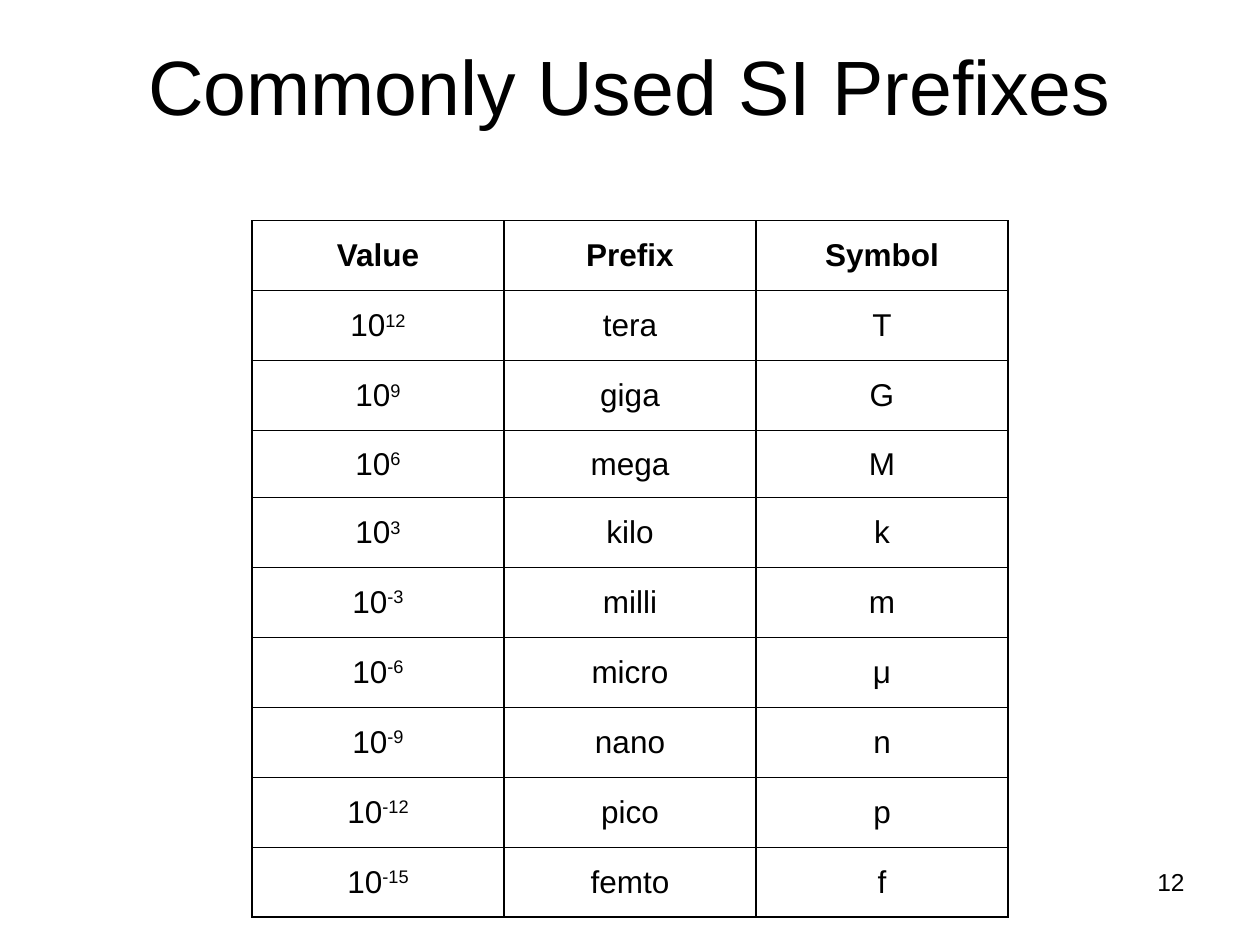
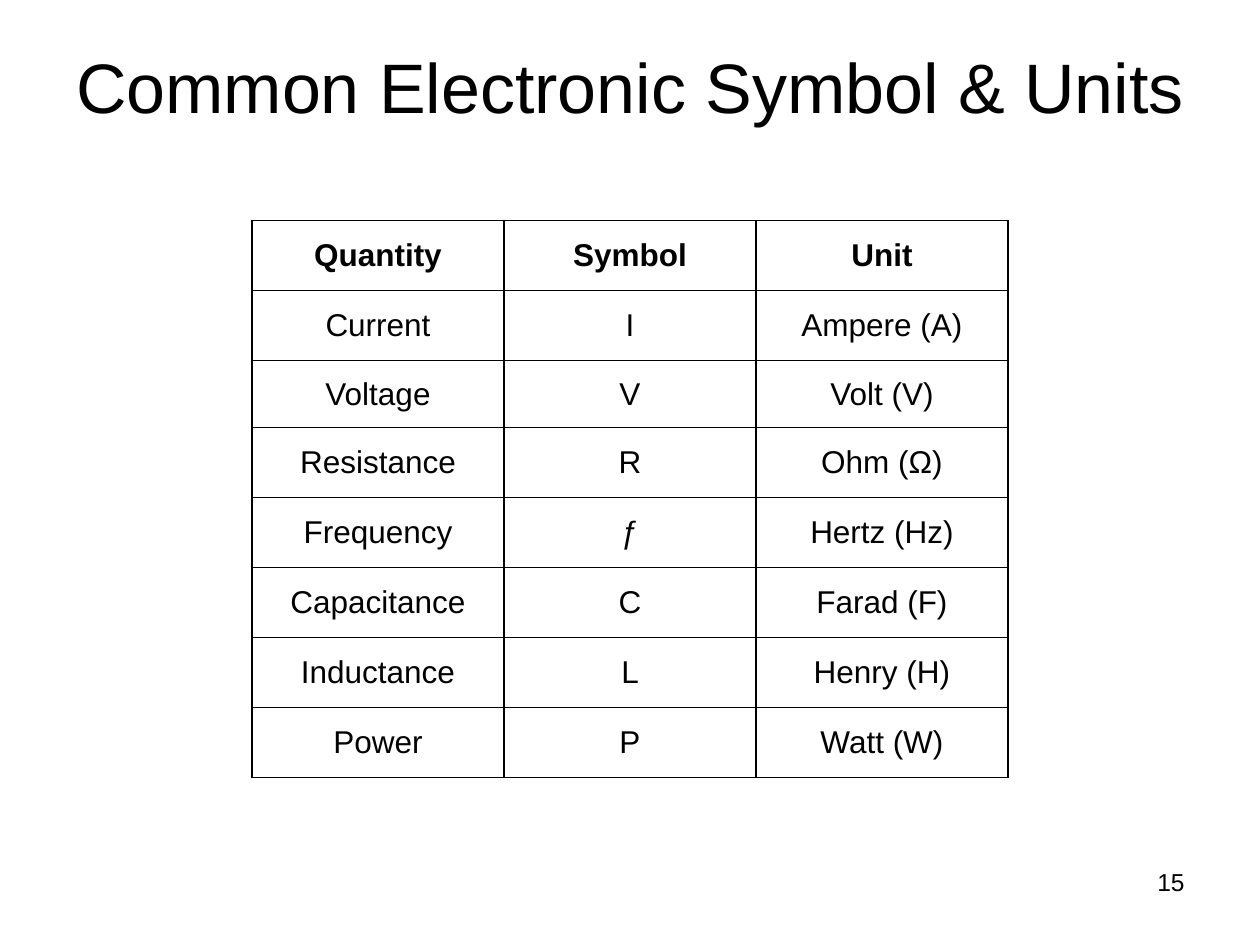
"""Build two reference slides: SI prefixes, and electronic symbols with their units."""
from lxml.etree import SubElement
from pptx import Presentation
from pptx.dml.color import RGBColor
from pptx.enum.text import MSO_ANCHOR, MSO_AUTO_SIZE, PP_ALIGN
from pptx.oxml.ns import qn
from pptx.util import Cm, Pt

BLACK = RGBColor(0x00, 0x00, 0x00)
FONT = "Arial"
COLUMN_WIDTH, ROW_HEIGHT, SHORT_ROW_HEIGHT = Cm(5.08), Cm(1.41), Cm(1.35)
BORDER = Pt(1)

SLIDES = [
    {
        "title": "Commonly Used SI Prefixes",
        "title_size": 44, "title_top": 0, "title_height": 3.4,
        "number": "12", "short_row": "mega",
        "rows": [
            ("Value", "Prefix", "Symbol"),
            ("10^12", "tera", "T"),
            ("10^9", "giga", "G"),
            ("10^6", "mega", "M"),
            ("10^3", "kilo", "k"),
            ("10^-3", "milli", "m"),
            ("10^-6", "micro", "μ"),
            ("10^-9", "nano", "n"),
            ("10^-12", "pico", "p"),
            ("10^-15", "femto", "f"),
        ],
    },
    {
        "title": "Common Electronic Symbol & Units",
        "title_size": 40, "title_top": 0.13, "title_height": 3.18,
        "number": "15", "short_row": "Voltage",
        "rows": [
            ("Quantity", "Symbol", "Unit"),
            ("Current", "I", "Ampere (A)"),
            ("Voltage", "V", "Volt (V)"),
            ("Resistance", "R", "Ohm (Ω)"),
            ("Frequency", "ƒ", "Hertz (Hz)"),
            ("Capacitance", "C", "Farad (F)"),
            ("Inductance", "L", "Henry (H)"),
            ("Power", "P", "Watt (W)"),
        ],
    },
]


def style(paragraph, size, alignment, bold=False):
    paragraph.alignment = alignment
    font = paragraph.font
    font.name, font.size, font.bold = FONT, Pt(size), bold
    font.color.rgb = BLACK


def add_title(page, content, width):
    title = page.shapes.title
    title.left, title.top = 0, Cm(content["title_top"])
    title.width, title.height = width, Cm(content["title_height"])
    frame = title.text_frame
    frame.text = content["title"]
    frame.auto_size = MSO_AUTO_SIZE.NONE
    frame.vertical_anchor = MSO_ANCHOR.MIDDLE
    style(frame.paragraphs[0], content["title_size"], PP_ALIGN.CENTER)


def add_page_number(page, number):
    box = page.shapes.add_textbox(Cm(18.2), Cm(17.35), Cm(5.93), Cm(1.32))
    box.text_frame.word_wrap = True
    box.text_frame.text = number
    style(box.text_frame.paragraphs[0], 14, PP_ALIGN.RIGHT)


def add_borders(cell):
    properties = cell._tc.get_or_add_tcPr()
    for side in ("a:lnL", "a:lnR", "a:lnT", "a:lnB"):
        line = SubElement(properties, qn(side), w=str(BORDER))
        fill = SubElement(line, qn("a:solidFill"))
        SubElement(fill, qn("a:srgbClr"), val=str(BLACK))


def fill_cell(cell, text, bold):
    add_borders(cell)
    cell.fill.background()
    cell.vertical_anchor = MSO_ANCHOR.MIDDLE
    paragraph = cell.text_frame.paragraphs[0]
    style(paragraph, 18, PP_ALIGN.CENTER, bold)
    base, _, exponent = text.partition("^")
    paragraph.add_run().text = base
    if exponent:
        span = paragraph.add_run()
        span.text = exponent
        span._r.get_or_add_rPr().set("baseline", "30000")


def add_grid(page, rows, short_row, page_width):
    heights = [SHORT_ROW_HEIGHT if short_row in row else ROW_HEIGHT for row in rows]
    columns = len(rows[0])
    width = COLUMN_WIDTH * columns
    table = page.shapes.add_table(
        len(rows), columns, (page_width - width) // 2, Cm(4.45), width, sum(heights)
    ).table
    table.first_row = table.horz_banding = False
    for column in table.columns:
        column.width = COLUMN_WIDTH
    for row_index, (row, height) in enumerate(zip(rows, heights)):
        table.rows[row_index].height = height
        for column_index, text in enumerate(row):
            fill_cell(table.cell(row_index, column_index), text, bold=row_index == 0)


def main():
    deck = Presentation()
    deck.slide_width, deck.slide_height = Cm(25.4), Cm(19.05)
    title_only = deck.slide_layouts.get_by_name("Title Only")
    for content in SLIDES:
        page = deck.slides.add_slide(title_only)
        add_title(page, content, deck.slide_width)
        add_page_number(page, content["number"])
        add_grid(page, content["rows"], content["short_row"], deck.slide_width)
    deck.save("out.pptx")


if __name__ == "__main__":
    main()
